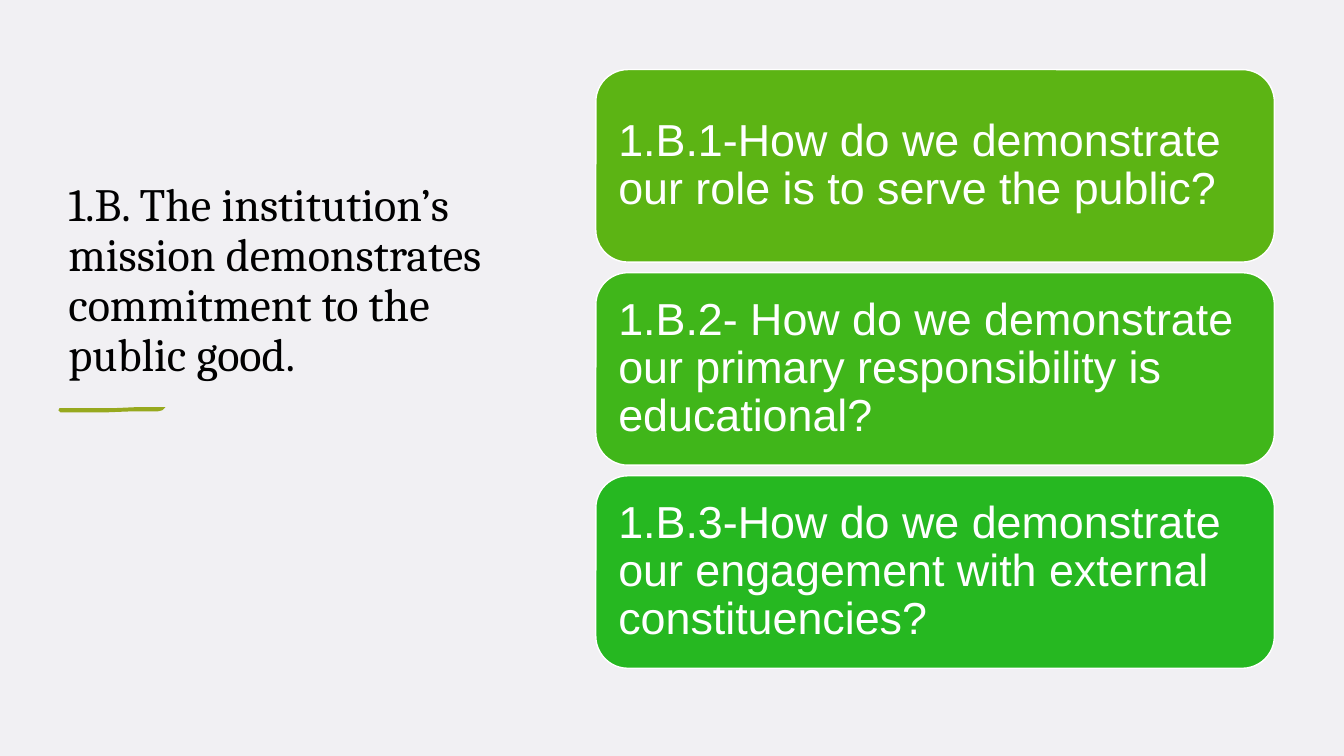
from pptx import Presentation
from pptx.dml.color import RGBColor
from pptx.enum import shapes, text
from pptx.util import Inches, Pt

COLOURS = {
    "background": "F1F0F3",
    "title": "000000",
    "stroke": "97A91E",
    "white": "FFFFFF",
}
QUESTIONS = [
    ("1.B.1-How do we demonstrate our role is to serve the public?", "5CB414"),
    ("1.B.2- How do we demonstrate our primary responsibility is educational?", "40B61A"),
    ("1.B.3-How do we demonstrate our engagement with external constituencies?", "26B821"),
]
STROKE_POINTS = [
    (0.59, 4.05), (0.88, 4.05), (1.11, 4.05), (1.33, 4.04), (1.64, 4.04),
    (1.61, 4.07), (1.57, 4.08), (1.33, 4.08), (1.07, 4.09), (0.6, 4.09),
    (0.58, 4.07),
]
PAGE_WIDTH, PAGE_HEIGHT = 13.33, 7.5
CARD_LEFT, CARD_WIDTH, CARD_HEIGHT = 5.91, 6.73, 1.91
FIRST_TOP, LAST_TOP = 0.69, 4.72


def colour(value):
    return RGBColor.from_string(value)


def apply(target, formats):
    for name, value in formats.items():
        setattr(target, name, value)


def paint(shape, fill):
    shape.shadow.inherit = False
    shape.fill.solid()
    shape.fill.fore_color.rgb = colour(fill)
    shape.line.fill.background()


def write_text(box, content, frame_formats, font_formats, font_colour):
    frame = box.text_frame
    apply(frame, {"word_wrap": True, **frame_formats})
    para = frame.paragraphs[0]
    apply(para, {"alignment": text.PP_ALIGN.LEFT, "line_spacing": 0.9})
    span = para.add_run()
    span.text = content
    apply(span.font, font_formats)
    span.font.color.rgb = colour(font_colour)


def add_backdrop(page):
    backdrop = page.shapes.add_shape(
        shapes.MSO_SHAPE.RECTANGLE, 0, 0, Inches(PAGE_WIDTH), Inches(PAGE_HEIGHT)
    )
    paint(backdrop, COLOURS["background"])


def add_title(page, content):
    box = page.shapes.add_textbox(Inches(0.58), Inches(0.7), Inches(4.67), Inches(3.13))
    write_text(
        box, content,
        {"vertical_anchor": text.MSO_ANCHOR.BOTTOM},
        {"size": Pt(33), "name": "Cambria"},
        COLOURS["title"],
    )


def add_brush_stroke(page):
    points = [(Inches(x), Inches(y)) for x, y in STROKE_POINTS]
    builder = page.shapes.build_freeform(*points[0])
    builder.add_line_segments(points[1:], close=True)
    paint(builder.convert_to_shape(), COLOURS["stroke"])


def add_card(page, top, content, fill):
    card = page.shapes.add_shape(
        shapes.MSO_SHAPE.ROUNDED_RECTANGLE,
        Inches(CARD_LEFT), Inches(top), Inches(CARD_WIDTH), Inches(CARD_HEIGHT),
    )
    paint(card, fill)
    card.line.color.rgb = colour(COLOURS["white"])
    card.line.width = Pt(1)
    margins = {f"margin_{side}": Inches(0.13) for side in ("left", "top", "right", "bottom")}
    write_text(
        card, content,
        {"vertical_anchor": text.MSO_ANCHOR.MIDDLE, **margins},
        {"size": Pt(32), "name": "Arial"},
        COLOURS["white"],
    )


def main():
    deck = Presentation()
    apply(deck, {"slide_width": Inches(PAGE_WIDTH), "slide_height": Inches(PAGE_HEIGHT)})
    page = deck.slides.add_slide(deck.slide_layouts[6])
    page.background.fill.solid()
    page.background.fill.fore_color.rgb = colour(COLOURS["background"])
    add_backdrop(page)
    add_title(page, "1.B. The institution’s mission demonstrates commitment to the public good.")
    add_brush_stroke(page)
    step = (LAST_TOP - FIRST_TOP) / (len(QUESTIONS) - 1)
    for index, (question, fill) in enumerate(QUESTIONS):
        add_card(page, FIRST_TOP + index * step, question, fill)
    deck.save("out.pptx")


if __name__ == "__main__":
    main()
